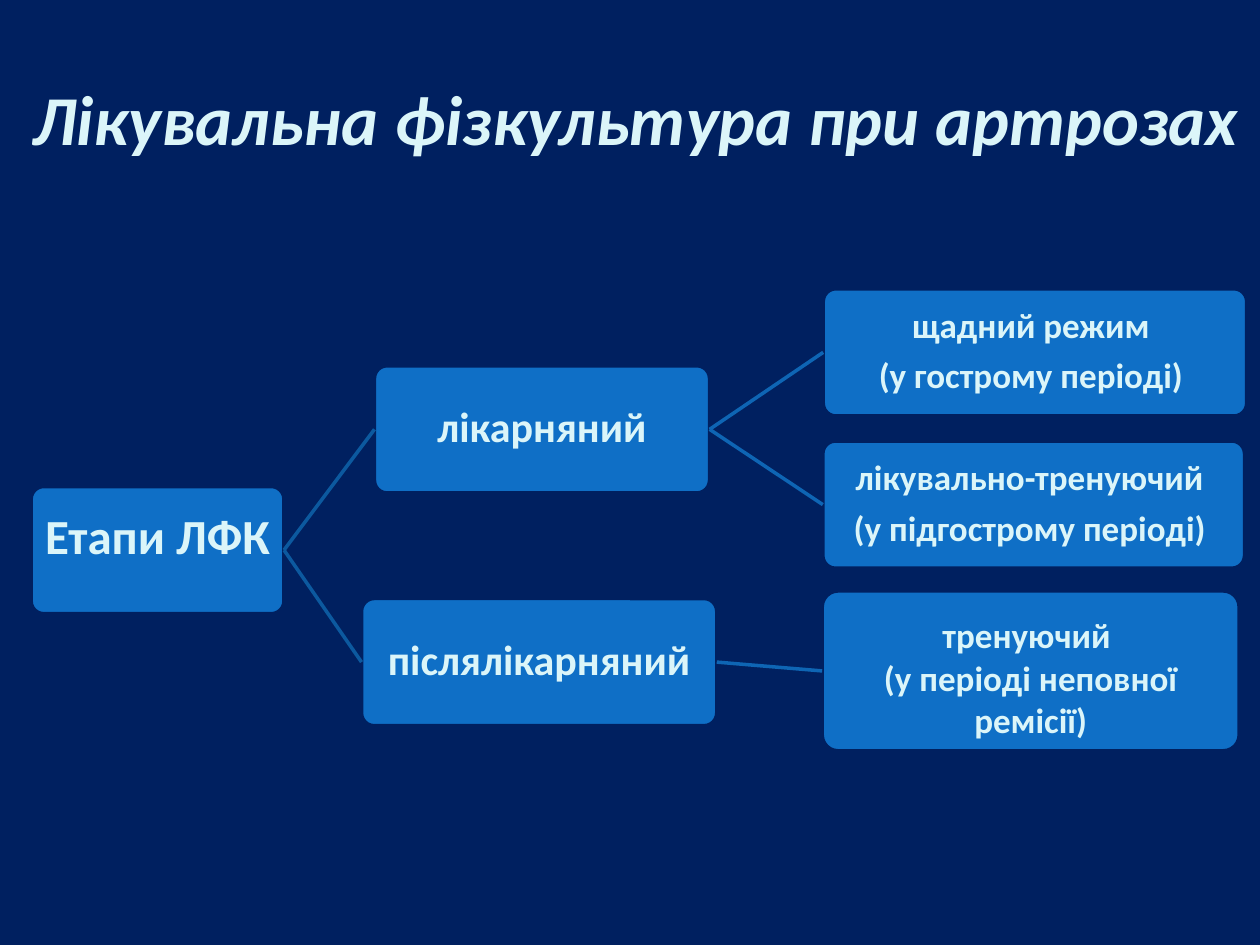
"""Build the slide with the stages of exercise therapy for arthrosis as a tree."""
from dataclasses import dataclass

from lxml import etree
from pptx import Presentation
from pptx.dml.color import RGBColor
from pptx.enum import shapes, text
from pptx.oxml import ns
from pptx.util import Pt


@dataclass(frozen=True)
class Theme:
    font: str = "Calibri"
    background: RGBColor = RGBColor(0x00, 0x20, 0x60)
    box: RGBColor = RGBColor(0x0F, 0x6F, 0xC6)
    ink: RGBColor = RGBColor(0xDB, 0xF5, 0xF9)
    stage_link: RGBColor = RGBColor(0x0C, 0x59, 0x9F)
    regimen_link: RGBColor = RGBColor(0x0E, 0x65, 0xB4)
    title_size: float = 40
    root_size: float = 28
    stage_size: float = 24
    regimen_size: float = 20
    line: float = 2


@dataclass(frozen=True)
class Node:
    lines: tuple[str, ...]
    left: float
    top: float
    width: float
    size: float
    height: float = 72.7
    line_spacing: float = 0.9
    space_after: float = 7
    inset_top: float = 2
    inset_bottom: float = 2


THEME = Theme()
NODES = {
    "root": Node(("Етапи ЛФК ",), 17.8, 278, 144.5, THEME.root_size,
                 line_spacing=1, space_after=0, inset_bottom=19),
    "hospital": Node(("лікарняний",), 214, 209, 191.5, THEME.stage_size),
    "after": Node(("післялікарняний",), 206.6, 342, 203, THEME.stage_size),
    "sparing": Node(("щадний режим ", "(у гострому періоді) "),
                    470.4, 165, 242, THEME.regimen_size),
    "healing": Node(("лікувально-тренуючий ", "(у підгострому періоді) "),
                    470.2, 252, 241, THEME.regimen_size),
    "training": Node(("тренуючий ", "(у періоді неповної ремісії)"),
                     469.8, 337.7, 238.3, THEME.regimen_size, height=91.4,
                     line_spacing=1, space_after=0, inset_top=9),
}
LINKS = (
    ("root", "hospital", THEME.stage_link),
    ("root", "after", THEME.stage_link),
    ("hospital", "sparing", THEME.regimen_link),
    ("hospital", "healing", THEME.regimen_link),
    ("after", "training", THEME.regimen_link),
)


def style_runs(paragraph, size: float, italic: bool = False) -> None:
    for run in paragraph.runs:
        run.font.name = THEME.font
        run.font.size = Pt(size)
        run.font.bold = True
        run.font.italic = italic
        run.font.color.rgb = THEME.ink


def set_title(slide, wording: str) -> None:
    title = slide.shapes.title
    title.left, title.top, title.width, title.height = map(Pt, (11.5, 39.6, 708.5, 55.4))
    frame = title.text_frame
    frame.text = wording
    frame.word_wrap = True
    frame.vertical_anchor = text.MSO_ANCHOR.TOP
    frame.paragraphs[0].alignment = text.PP_ALIGN.LEFT
    style_runs(frame.paragraphs[0], THEME.title_size, italic=True)


def draw_node(slide, node: Node):
    box = slide.shapes.add_shape(
        shapes.MSO_SHAPE.ROUNDED_RECTANGLE,
        Pt(node.left), Pt(node.top), Pt(node.width), Pt(node.height))
    box.adjustments[0] = 0.1
    box.shadow.inherit = False
    box.fill.solid()
    box.fill.fore_color.rgb = THEME.box
    box.line.color.rgb = THEME.background
    box.line.width = Pt(THEME.line)
    frame = box.text_frame
    frame.text = "\n".join(node.lines)
    frame.word_wrap = True
    frame.vertical_anchor = text.MSO_ANCHOR.MIDDLE
    frame.margin_left = frame.margin_right = Pt(3)
    frame.margin_top, frame.margin_bottom = Pt(node.inset_top), Pt(node.inset_bottom)
    for paragraph in frame.paragraphs:
        paragraph.alignment = text.PP_ALIGN.CENTER
        paragraph.line_spacing = node.line_spacing
        paragraph.space_after = Pt(node.space_after)
        style_runs(paragraph, node.size)
    return box


def draw_link(slide, parent, child, color: RGBColor) -> None:
    link = slide.shapes.add_connector(shapes.MSO_CONNECTOR.STRAIGHT, 0, 0, 0, 0)
    link.begin_connect(parent, 3)
    link.end_connect(child, 1)
    link.line.color.rgb = color
    link.line.width = Pt(THEME.line)
    etree.SubElement(link._element.spPr, ns.qn("a:effectLst"))


def main() -> None:
    deck = Presentation()
    deck.slide_width, deck.slide_height = Pt(720), Pt(540)
    slide = deck.slides.add_slide(deck.slide_layouts[5])
    slide.background.fill.solid()
    slide.background.fill.fore_color.rgb = THEME.background
    set_title(slide, "Лікувальна фізкультура при артрозах")
    boxes = {name: draw_node(slide, node) for name, node in NODES.items()}
    for parent, child, color in LINKS:
        draw_link(slide, boxes[parent], boxes[child], color)
    deck.save("out.pptx")


if __name__ == "__main__":
    main()
